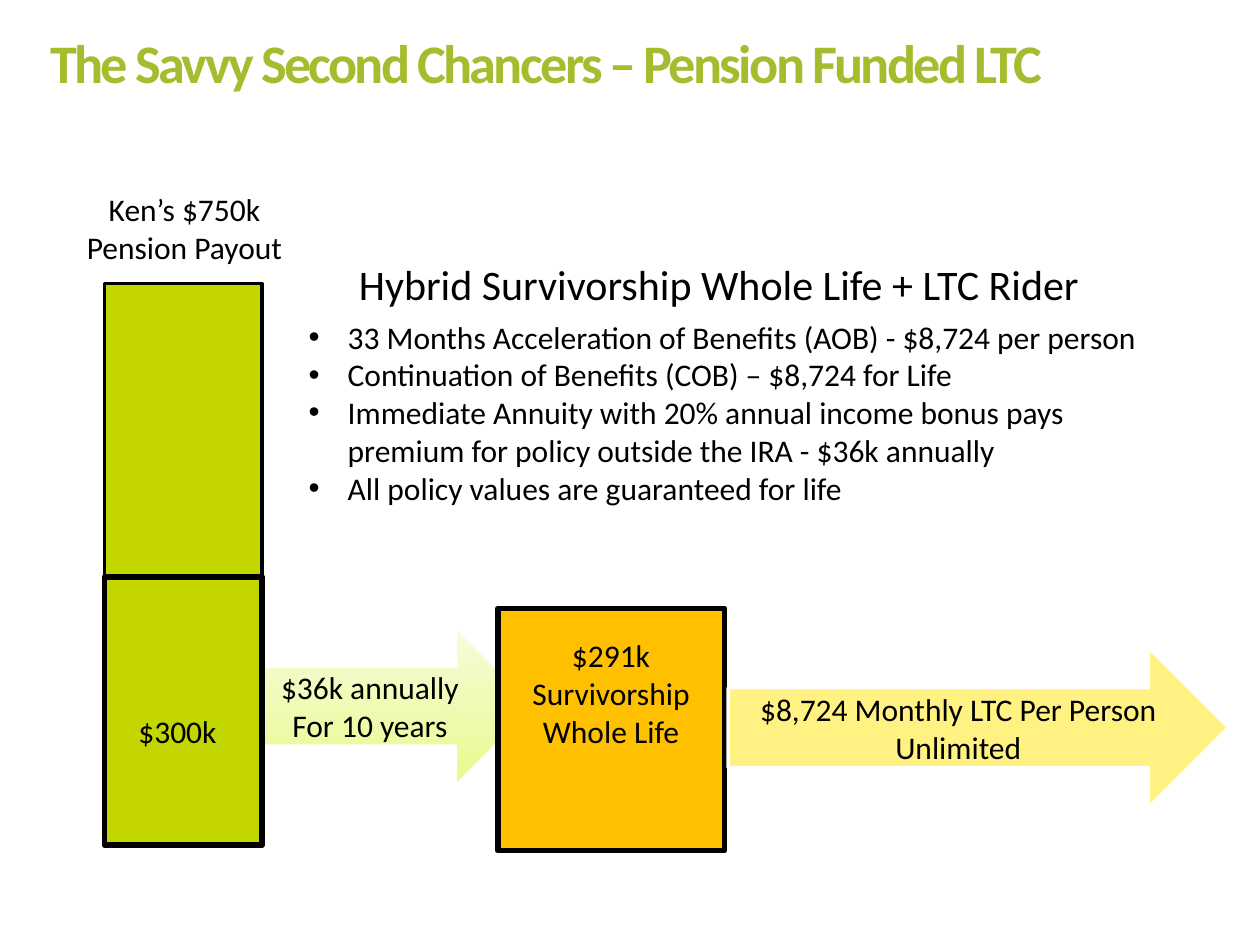
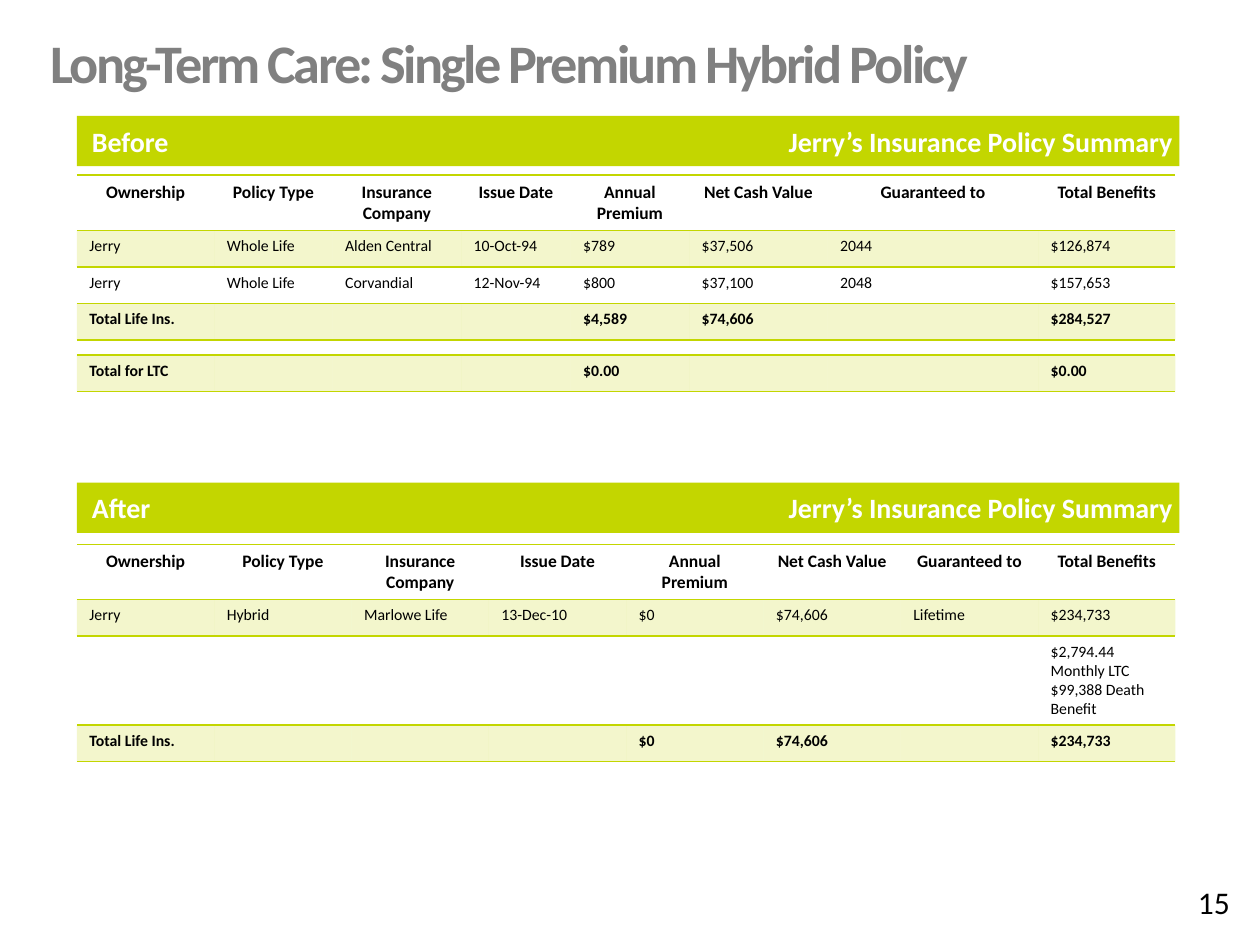
from typing import NamedTuple

from lxml import etree
from pptx import Presentation
from pptx.dml.color import RGBColor
from pptx.enum.shapes import MSO_SHAPE
from pptx.enum.text import MSO_ANCHOR, MSO_AUTO_SIZE, PP_ALIGN
from pptx.oxml.ns import qn
from pptx.util import Inches, Pt

LEFT, CENTER, RIGHT = PP_ALIGN.LEFT, PP_ALIGN.CENTER, PP_ALIGN.RIGHT
TOP, MIDDLE = MSO_ANCHOR.TOP, MSO_ANCHOR.MIDDLE
RECTANGLE, RIGHT_ARROW = MSO_SHAPE.RECTANGLE, MSO_SHAPE.RIGHT_ARROW
NO_AUTOFIT = MSO_AUTO_SIZE.NONE

FONT = "Calibri"
BLACK, WHITE, GRAY = "000000", "FFFFFF", "808080"
LIME, OLIVE, GOLD, YELLOW = "C3D600", "A4BD2E", "FFC000", "FFF282"
GRADIENT_BOTTOM, GRADIENT_TOP = "E8FA8B", "F6FCDD"
PLAIN_TABLE_STYLE = "{2D5ABB26-0587-4C30-8999-92F81FD0307C}"
TIGHT_INSETS = (0.05, 0.03)
TABLE_LEFT = 0.61


class Box(NamedTuple):
    left: float
    top: float
    width: float
    height: float

    def lengths(self) -> list:
        return [Inches(value) for value in self]


class Style(NamedTuple):
    size: float = 18
    color: str = BLACK
    bold: bool = False
    align: PP_ALIGN = LEFT


class Block(NamedTuple):
    box: Box
    fill: str
    line: str
    line_width: float
    preset: MSO_SHAPE = RECTANGLE
    text: str = ""


class Label(NamedTuple):
    box: Box
    text: str
    style: Style = Style()
    wrap: bool = True


class Row(NamedTuple):
    cells: tuple
    height: float = 0.29
    style: Style = Style(9)
    shaded: bool = False
    line_below: bool = True


BODY, CENTERED = Style(), Style(align=CENTER)
HEADER, TOTAL = Style(10, bold=True, align=CENTER), Style(9, bold=True)
BAND = Style(16, WHITE, True)

BARS = [
    Block(Box(0.83, 2.25, 1.25, 2.42), LIME, BLACK, 2),
    Block(Box(0.83, 4.58, 1.25, 2.13), LIME, BLACK, 3.25),
    Block(Box(3.95, 4.83, 1.8, 1.92), GOLD, BLACK, 3.25),
]
PREMIUM_ARROW = Block(Box(1.94, 4.97, 2.31, 1.27), GRADIENT_BOTTOM, WHITE, 2,
                      RIGHT_ARROW, "$36k annually\nFor 10 years")
BENEFIT_ARROW = Block(Box(5.78, 5.14, 3.97, 1.27), YELLOW, WHITE, 2, RIGHT_ARROW,
                      "$8,724 Monthly LTC Per Person\nUnlimited")
LABELS = [
    Label(Box(0.58, 1.46, 1.77, 0.71), "Ken’s $750k\nPension Payout", CENTERED, False),
    Label(Box(2.75, 2, 6.42, 0.5), "Hybrid Survivorship Whole Life + LTC Rider", Style(24)),
    Label(Box(1, 5.6, 0.95, 0.4), "$300k"),
    Label(Box(4, 5, 1.7, 1.01), "$291k Survivorship\nWhole Life", CENTERED),
]
FEATURES = [
    "33 Months Acceleration of Benefits (AOB) - $8,724 per person",
    "Continuation of Benefits (COB) – $8,724 for Life",
    "Immediate Annuity with 20% annual income bonus pays premium for policy "
    "outside the IRA - $36k annually",
    "All policy values are guaranteed for life",
]

HEADINGS = Row(("Ownership", "Policy Type", "Insurance Company", "Issue Date",
                "Annual Premium", "Net Cash Value", "Guaranteed to", "Total Benefits"),
               0.43, HEADER)
BEFORE_WIDTHS = [1.09, 0.94, 1.02, 0.87, 0.94, 1.1, 1.67, 1.09]
AFTER_WIDTHS = [1.09] * 8
BEFORE_ROWS = [
    HEADINGS,
    Row(("Jerry", "Whole Life", "Alden Central", "10-Oct-94", "$789", "$37,506", "2044",
         "$126,874"), shaded=True, line_below=False),
    Row(("Jerry", "Whole Life", "Corvandial", "12-Nov-94", "$800", "$37,100", "2048",
         "$157,653")),
    Row(("Total Life Ins.", "", "", "", "$4,589", "$74,606", "", "$284,527"),
        style=TOTAL, shaded=True),
    Row(("",) * 8, 0.12, Style(1)),
    Row(("Total for LTC", "", "", "", "$0.00", "", "", "$0.00"), style=TOTAL, shaded=True),
]
AFTER_ROWS = [
    HEADINGS,
    Row(("Jerry", "Hybrid", "Marlowe Life", "13-Dec-10", "$0", "$74,606", "Lifetime",
         "$234,733"), shaded=True, line_below=False),
    Row(("",) * 7 + ("$2,794.44 Monthly LTC\n$99,388 Death Benefit",), 0.7),
    Row(("Total Life Ins.", "", "", "", "$0", "$74,606", "", "$234,733"),
        style=TOTAL, shaded=True),
]


def rgb(color: str) -> RGBColor:
    return RGBColor.from_string(color)


def format_text(frame, style: Style) -> None:
    for paragraph in frame.paragraphs:
        paragraph.alignment = style.align
        font = paragraph.font
        font.name, font.size, font.bold = FONT, Pt(style.size), style.bold
        font.color.rgb = rgb(style.color)


def set_frame(frame, anchor: MSO_ANCHOR, wrap: bool = True, insets: tuple = (0.1, 0.05)) -> None:
    frame.auto_size, frame.word_wrap, frame.vertical_anchor = NO_AUTOFIT, wrap, anchor
    frame.margin_left = frame.margin_right = Inches(insets[0])
    frame.margin_top = frame.margin_bottom = Inches(insets[1])


def place(placeholder, box: Box) -> None:
    placeholder.left, placeholder.top, placeholder.width, placeholder.height = box.lengths()


def set_title(slide, text: str, color: str, width: float) -> None:
    title = slide.shapes.title
    place(title, Box(0.35, 0.2, width, 0.57))
    title.text_frame.text = text
    set_frame(title.text_frame, TOP, insets=TIGHT_INSETS)
    format_text(title.text_frame, Style(31, color, True))
    for run in title.text_frame.paragraphs[0].runs:
        run.font._element.set("spc", "-150")


def add_label(slide, label: Label, anchor: MSO_ANCHOR = TOP, insets: tuple = (0.1, 0.05)) -> None:
    frame = slide.shapes.add_textbox(*label.box.lengths()).text_frame
    frame.text = label.text
    set_frame(frame, anchor, label.wrap, insets)
    format_text(frame, label.style)


def add_block(slide, block: Block):
    shape = slide.shapes.add_shape(block.preset, *block.box.lengths())
    shape.shadow.inherit = False
    shape.fill.solid()
    shape.fill.fore_color.rgb = rgb(block.fill)
    if block.line_width:
        shape.line.color.rgb = rgb(block.line)
        shape.line.width = Pt(block.line_width)
    else:
        shape.line.fill.background()
    if block.text:
        shape.text_frame.text = block.text
        set_frame(shape.text_frame, MIDDLE)
        format_text(shape.text_frame, CENTERED)
    return shape


def add_premium_arrow(slide) -> None:
    fill = add_block(slide, PREMIUM_ARROW).fill
    fill.gradient()
    fill.gradient_angle = 90
    for stop, color in zip(fill.gradient_stops, (GRADIENT_BOTTOM, GRADIENT_TOP)):
        stop.color.rgb = rgb(color)


def fill_features(body) -> None:
    place(body, Box(2.35, 2.47, 7, 1.92))
    frame = body.text_frame
    frame.text = "\n".join(FEATURES)
    set_frame(frame, TOP)
    for paragraph in frame.paragraphs:
        paragraph.space_before = Pt(0)
        properties = paragraph._p.get_or_add_pPr()
        properties.set("marL", str(Inches(0.31)))
        properties.set("indent", str(-Inches(0.31)))
        etree.SubElement(properties, qn("a:buFont")).set("typeface", "Arial")
        etree.SubElement(properties, qn("a:buChar")).set("char", "•")
    format_text(frame, BODY)


def add_border(cell, side: str) -> None:
    border = etree.SubElement(cell._tc.get_or_add_tcPr(), qn(f"a:{side}"), w=str(Pt(1)))
    solid = etree.SubElement(border, qn("a:solidFill"))
    etree.SubElement(solid, qn("a:srgbClr"), val=LIME)


def shade(cell) -> None:
    """Fill the cell with lime at 20 % opacity."""
    cell.fill.solid()
    cell.fill.fore_color.rgb = rgb(LIME)
    color = cell._tc.tcPr.find(qn("a:solidFill")).find(qn("a:srgbClr"))
    etree.SubElement(color, qn("a:alpha"), val="20000")


def add_policy_table(slide, top: float, widths: list, rows: list) -> None:
    box = Box(TABLE_LEFT, top, sum(widths), sum(row.height for row in rows))
    graphic = slide.shapes.add_table(len(rows), len(widths), *box.lengths())
    table = graphic.table
    table._tbl.tblPr.find(qn("a:tableStyleId")).text = PLAIN_TABLE_STYLE
    for column, width in zip(table.columns, widths):
        column.width = Inches(width)
    for index, row in enumerate(rows):
        table.rows[index].height = Inches(row.height)
        for cell, text in zip(table.rows[index].cells, row.cells):
            cell.text = text
            format_text(cell.text_frame, row.style)
            if not text:
                end = cell.text_frame.paragraphs[0]._p.get_or_add_endParaRPr()
                end.set("sz", str(row.style.size * 100))
            if index == 0 or rows[index - 1].line_below:
                add_border(cell, "lnT")
            if row.line_below:
                add_border(cell, "lnB")
            if row.shaded:
                shade(cell)
            else:
                cell.fill.background()


def add_band(slide, top: float, stage: str) -> None:
    add_block(slide, Block(Box(TABLE_LEFT, top, 8.75, 0.4), LIME, LIME, 0))
    summary = Label(Box(3.03, top + 0.04, 6.33, 0.32), "Jerry’s Insurance Policy Summary",
                    BAND._replace(align=RIGHT))
    for label in (summary, Label(Box(0.68, top + 0.04, 1.02, 0.32), stage, BAND)):
        add_label(slide, label, MIDDLE, TIGHT_INSETS)


def build_pension_slide(deck) -> None:
    slide = deck.slides.add_slide(deck.slide_layouts[1])
    set_title(slide, "The Savvy Second Chancers – Pension Funded LTC", OLIVE, 8.04)
    fill_features(slide.placeholders[1])
    add_premium_arrow(slide)
    for block in (*BARS, BENEFIT_ARROW):
        add_block(slide, block)
    for label in LABELS:
        add_label(slide, label)


def build_policy_slide(deck) -> None:
    slide = deck.slides.add_slide(deck.slide_layouts[5])
    set_title(slide, "Long-Term Care: Single Premium Hybrid Policy", GRAY, 7.56)
    add_band(slide, 0.92, "Before")
    add_policy_table(slide, 1.39, BEFORE_WIDTHS, BEFORE_ROWS)
    add_band(slide, 3.83, "After")
    add_policy_table(slide, 4.32, AFTER_WIDTHS, AFTER_ROWS)
    add_label(slide, Label(Box(9.41, 6.96, 0.46, 0.4), "15", wrap=False))


def main() -> None:
    deck = Presentation()
    deck.slide_width, deck.slide_height = Inches(10), Inches(7.5)
    build_pension_slide(deck)
    build_policy_slide(deck)
    deck.save("out.pptx")


if __name__ == "__main__":
    main()
